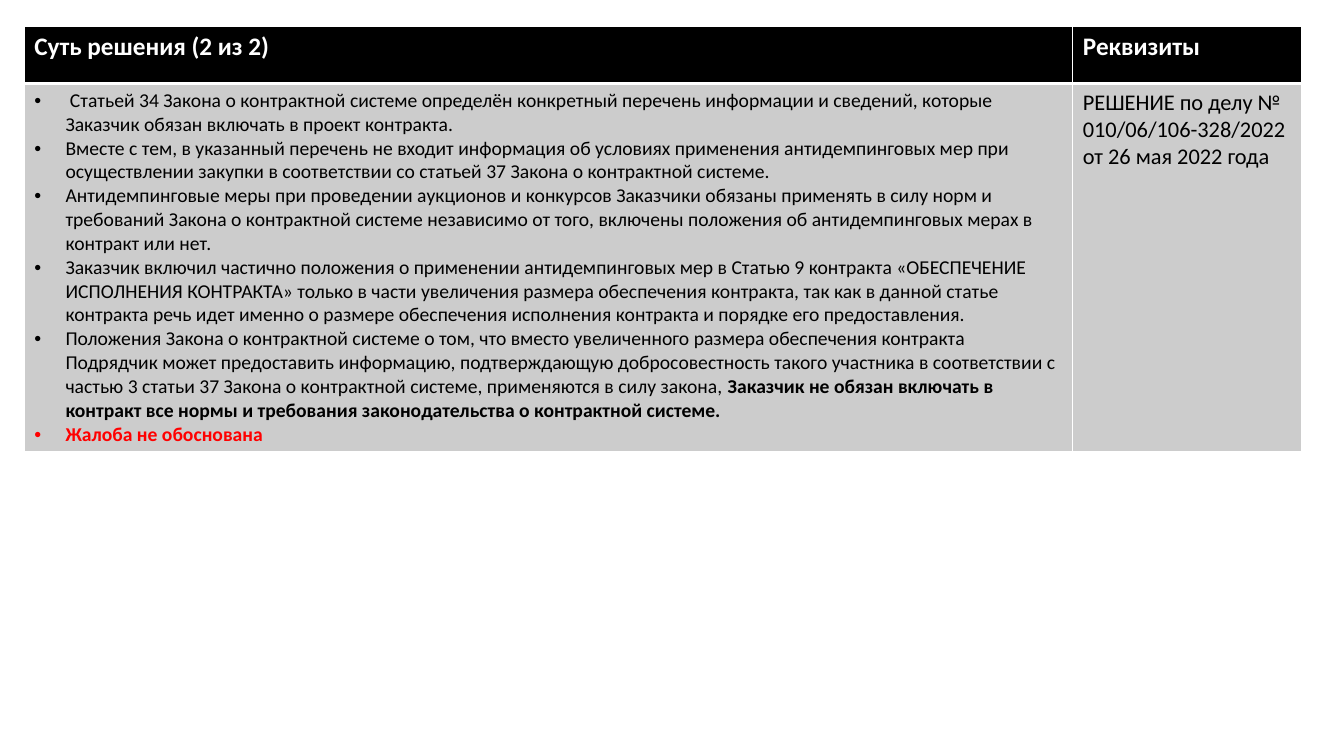
from lxml import etree
from pptx import Presentation
from pptx import util as u
from pptx.dml.color import RGBColor
from pptx.oxml import ns

WIDTH, HEIGHT = 13.33, 7.5
TABLE_LEFT, TABLE_TOP = 0.24, 0.26
COLUMNS = (10.4, 2.27)
ROWS = (0.57, 3.6)
BULLET_INDENT = 0.31
COLORS = {"header": "000000", "body": "CCCCCC", "line": "FFFFFF",
          "light": "FFFFFF", "dark": "000000", "verdict": "FF0000"}

HEADING = {"size": u.Pt(18), "bold": True, "color": "light"}
FINDING = {"size": u.Pt(14), "bold": False, "color": "dark"}
EMPHASIS = {**FINDING, "bold": True}
VERDICT = {**EMPHASIS, "color": "verdict"}
REFERENCE = {**FINDING, "size": u.Pt(16)}

# Each paragraph is a list of (text, format) runs.
HEADINGS = [[[("Суть решения (2 из 2)", HEADING)]], [[("Реквизиты", HEADING)]]]
FINDINGS = [
    [(" Статьей 34 Закона о контрактной системе определён конкретный перечень "
      "информации и сведений, которые Заказчик обязан включать в проект контракта.",
      FINDING)],
    [("Вместе с тем, в указанный перечень не входит информация об условиях "
      "применения антидемпинговых мер при осуществлении закупки в соответствии "
      "со статьей 37 Закона о контрактной системе.", FINDING)],
    [("Антидемпинговые меры при проведении аукционов и конкурсов Заказчики обязаны "
      "применять в силу норм и требований Закона о контрактной системе независимо "
      "от того, включены положения об антидемпинговых мерах в контракт или нет.",
      FINDING)],
    [("Заказчик включил частично положения о применении антидемпинговых мер в "
      "Статью 9 контракта «ОБЕСПЕЧЕНИЕ ИСПОЛНЕНИЯ КОНТРАКТА» только в части "
      "увеличения размера обеспечения контракта, так как в данной статье контракта "
      "речь идет именно о размере обеспечения исполнения контракта и порядке его "
      "предоставления.", FINDING)],
    [("Положения Закона о контрактной системе о том, что вместо увеличенного размера "
      "обеспечения контракта Подрядчик может предоставить информацию, подтверждающую "
      "добросовестность такого участника в соответствии с частью 3 статьи 37 Закона "
      "о контрактной системе, применяются в силу закона, ", FINDING),
     ("Заказчик не обязан включать в контракт все нормы и требования "
      "законодательства о контрактной системе.", EMPHASIS)],
    [("Жалоба не обоснована", VERDICT)],
]
REFERENCES = [
    [("РЕШЕНИЕ по делу № 010/06/106-328/2022", REFERENCE)],
    [("от 26 мая 2022 года", REFERENCE)],
]


def add_run(paragraph, content, style):
    run = paragraph.add_run()
    run.text = content
    run.font.name = "Calibri"
    for name in ("size", "bold"):
        setattr(run.font, name, style[name])
    run.font.color.rgb = RGBColor.from_string(COLORS[style["color"]])


def add_bullet(paragraph):
    properties = paragraph._p.get_or_add_pPr()
    indent = u.Inches(BULLET_INDENT)
    properties.set("marL", str(indent))
    properties.set("indent", str(-indent))
    etree.SubElement(properties, ns.qn("a:buFont"), typeface="Arial")
    etree.SubElement(properties, ns.qn("a:buChar"), char="•")


def set_borders(cell, **widths):
    """Draw the four cell borders, 1 pt wide unless a side names another width."""
    properties = cell._tc.get_or_add_tcPr()
    for side in "LRTB":
        width = str(u.Pt(widths.get(side, 1)))
        line = etree.SubElement(properties, ns.qn(f"a:ln{side}"), w=width)
        fill = etree.SubElement(line, ns.qn("a:solidFill"))
        etree.SubElement(fill, ns.qn("a:srgbClr"), val=COLORS["line"])


def fill_cell(cell, paragraphs, color, bulleted=False, **border_widths):
    set_borders(cell, **border_widths)
    cell.fill.solid()
    cell.fill.fore_color.rgb = RGBColor.from_string(COLORS[color])
    frame = cell.text_frame
    for index, runs in enumerate(paragraphs):
        paragraph = frame.add_paragraph() if index else frame.paragraphs[0]
        if bulleted:
            add_bullet(paragraph)
        for content, style in runs:
            add_run(paragraph, content, style)


def add_grid(slide):
    lengths = (TABLE_LEFT, TABLE_TOP, sum(COLUMNS), sum(ROWS))
    table = slide.shapes.add_table(len(ROWS), len(COLUMNS), *map(u.Inches, lengths)).table
    for column, width in zip(table.columns, COLUMNS):
        column.width = u.Inches(width)
    for row, height in zip(table.rows, ROWS):
        row.height = u.Inches(height)
    return table


def main():
    presentation = Presentation()
    presentation.slide_width = u.Inches(WIDTH)
    presentation.slide_height = u.Inches(HEIGHT)
    slide = presentation.slides.add_slide(presentation.slide_layouts[6])

    table = add_grid(slide)
    for column, heading in enumerate(HEADINGS):
        fill_cell(table.cell(0, column), heading, "header", B=3)
    fill_cell(table.cell(1, 0), FINDINGS, "body", bulleted=True, T=3)
    fill_cell(table.cell(1, 1), REFERENCES, "body", T=3)
    presentation.save("out.pptx")


if __name__ == "__main__":
    main()
